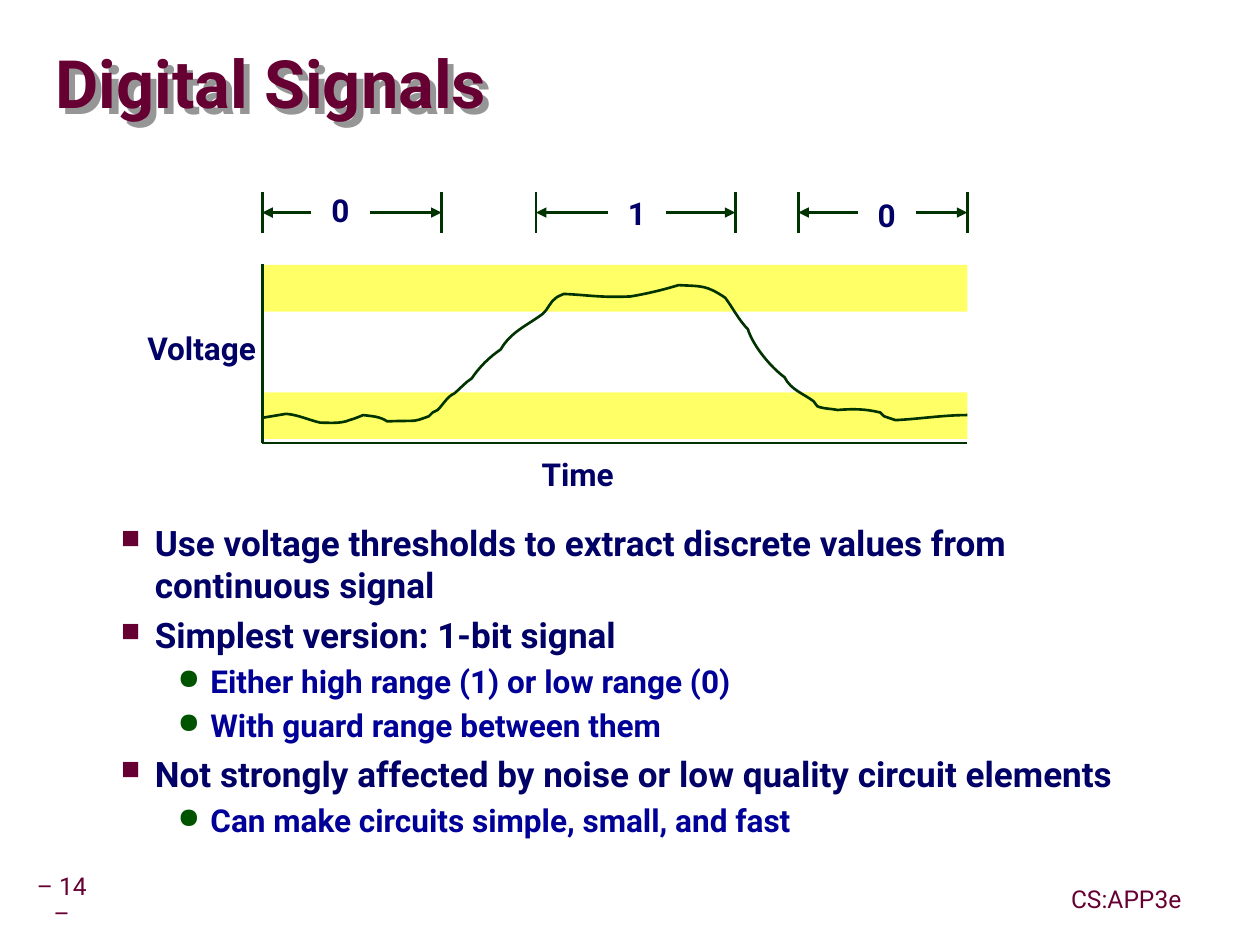
from lxml import etree
from pptx import Presentation
from pptx.dml.color import RGBColor
from pptx.enum.shapes import MSO_CONNECTOR, MSO_SHAPE
from pptx.enum.text import MSO_ANCHOR, PP_ALIGN
from pptx.oxml.ns import qn
from pptx.util import Inches, Pt

STRAIGHT = MSO_CONNECTOR.STRAIGHT
RECT = MSO_SHAPE.RECTANGLE
TOP, MIDDLE = MSO_ANCHOR.TOP, MSO_ANCHOR.MIDDLE
LEFT, CENTER, RIGHT = PP_ALIGN.LEFT, PP_ALIGN.CENTER, PP_ALIGN.RIGHT

FONT, BULLET_FONT = "Roboto", "OpenSymbol"
MAROON, NAVY, BLUE = "660033", "000066", "000099"
GREEN, BULLET_GREEN = "003300", "005400"
YELLOW, WHITE, GRAY = "FFFF66", "FFFFFF", "969696"

# Level: size, colour, left margin, indent, line spacing, space before,
# bullet, bullet colour, bullet size in percent
LEVELS = {
    1: (20, NAVY, 0.81, -0.27, 1.0, 5, "■", MAROON, 75),
    2: (18, BLUE, 1.25, -0.26, 1.07, 2, "●", BULLET_GREEN, 90),
}
BULLETS = [
    (1, "Use voltage thresholds to extract discrete values from continuous signal"),
    (1, "Simplest version: 1-bit signal"),
    (2, "Either high range (1) or low range (0)"),
    (2, "With guard range between them"),
    (1, "Not strongly affected by noise or low quality circuit elements"),
    (2, "Can make circuits simple, small, and fast"),
]
# Start, end, label left and label top, from the top left of the span row
SPANS = [("0", 0, 1.42, 0.4, -0.02), ("1", 2.17, 3.75, 2.75, 0),
         ("0", 4.25, 5.59, 4.73, 0.02)]
# Signal from the top left of the plot: start, then Bézier control points and ends
SIGNAL_START = (0.01, 1.22)
SIGNAL = [
    (0.07, 1.21, 0.13, 1.20, 0.19, 1.19), (0.29, 1.20, 0.37, 1.24, 0.46, 1.26),
    (0.53, 1.26, 0.62, 1.27, 0.69, 1.24), (0.73, 1.23, 0.80, 1.20, 0.80, 1.20),
    (0.87, 1.21, 0.93, 1.21, 0.99, 1.25), (1.24, 1.24, 1.18, 1.26, 1.32, 1.21),
    (1.33, 1.20, 1.33, 1.19, 1.35, 1.18), (1.36, 1.17, 1.38, 1.17, 1.39, 1.16),
    (1.43, 1.12, 1.47, 1.05, 1.52, 1.03), (1.57, 0.99, 1.61, 0.94, 1.66, 0.91),
    (1.72, 0.82, 1.80, 0.74, 1.89, 0.68), (1.97, 0.54, 2.10, 0.49, 2.22, 0.40),
    (2.27, 0.36, 2.28, 0.30, 2.33, 0.27), (2.34, 0.26, 2.37, 0.25, 2.39, 0.24),
    (2.60, 0.25, 2.68, 0.27, 2.92, 0.26), (3.04, 0.24, 3.17, 0.21, 3.30, 0.17),
    (3.49, 0.18, 3.52, 0.17, 3.67, 0.27), (3.73, 0.35, 3.78, 0.45, 3.85, 0.52),
    (3.89, 0.65, 4.03, 0.82, 4.14, 0.90), (4.19, 1.00, 4.29, 1.03, 4.37, 1.09),
    (4.38, 1.10, 4.39, 1.12, 4.40, 1.13), (4.44, 1.15, 4.52, 1.15, 4.56, 1.16),
    (4.68, 1.15, 4.78, 1.15, 4.90, 1.18), (4.91, 1.19, 4.92, 1.20, 4.93, 1.21),
    (4.96, 1.22, 5.02, 1.24, 5.02, 1.24), (5.22, 1.23, 5.40, 1.20, 5.59, 1.20),
]


def rgb(color):
    return RGBColor.from_string(color)


def inches(*values):
    return [Inches(v) for v in values]


def set_text(s, text, size, color, bold=True, align=CENTER, anchor=TOP,
             inset=0.05, spacing=0.9, wrap=True):
    tf = s.text_frame
    tf.text = text
    tf.word_wrap = wrap
    tf.vertical_anchor = anchor
    tf.margin_left = tf.margin_right = Inches(inset)
    tf.margin_top = tf.margin_bottom = Inches(inset)
    p = tf.paragraphs[0]
    p.alignment = align
    p.line_spacing = spacing
    format_run(p.runs[0], size, color, bold)


def format_run(r, size, color, bold=True):
    r.font.name = FONT
    r.font.size = Pt(size)
    r.font.bold = bold
    r.font.color.rgb = rgb(color)


def add_text(slide, box, *args, **kwargs):
    s = slide.shapes.add_textbox(*inches(*box))
    set_text(s, *args, **kwargs)
    return s


def set_line(s, color):
    s.line.color.rgb = rgb(color)
    s.line.width = Pt(1.5)


def add_rect(slide, box, fill):
    s = slide.shapes.add_shape(RECT, *inches(*box))
    s.shadow.inherit = False
    s.fill.solid()
    s.fill.fore_color.rgb = rgb(fill)
    s.line.fill.background()
    return s


def add_line(slide, x1, y1, x2, y2, arrows=False):
    s = slide.shapes.add_connector(STRAIGHT, *inches(x1, y1, x2, y2))
    set_line(s, GREEN)
    if arrows:
        ln = s.line._get_or_add_ln()
        for end in ("a:headEnd", "a:tailEnd"):
            etree.SubElement(ln, qn(end), type="triangle")
    etree.SubElement(s._element.spPr, qn("a:effectLst"))


def add_title(slide, box):
    s = add_text(slide, box, "Digital Signals", 38, MAROON, align=LEFT,
                 anchor=MIDDLE, inset=0, spacing=0.87)
    effects = etree.SubElement(s._element.spPr, qn("a:effectLst"))
    shadow = etree.SubElement(effects, qn("a:outerShdw"), dir="2700000",
                              dist=str(Inches(0.07)), algn="ctr", rotWithShape="0")
    etree.SubElement(shadow, qn("a:srgbClr"), val=GRAY)


def add_spans(slide, box):
    """Draw the row of dimension arrows that names each bit."""
    x, y, _, h = box
    for bit, start, end, label_x, label_y in SPANS:
        for tick in (start, end):
            add_line(slide, x + tick, y, x + tick, y + h)
        add_line(slide, x + start, y + h / 2, x + end, y + h / 2, arrows=True)
        s = add_rect(slide, (x + label_x, y + label_y, 0.44, 0.39), WHITE)
        set_line(s, WHITE)
        set_text(s, bit, 18, NAVY)


def add_signal(slide, x, y):
    """Join the knots, then turn each straight piece into a Bézier curve."""
    def place(px, py):
        return Inches(x + px), Inches(y + py)

    builder = slide.shapes.build_freeform(*place(*SIGNAL_START))
    builder.add_line_segments([place(*seg[4:]) for seg in SIGNAL], close=False)
    s = builder.convert_to_shape()
    s.shadow.inherit = False
    s.fill.background()
    set_line(s, GREEN)
    pieces = list(s._element.iter(qn("a:lnTo")))
    for piece, seg in zip(pieces, SIGNAL):
        piece.tag = qn("a:cubicBezTo")
        for i, control in enumerate((seg[:2], seg[2:4])):
            cx, cy = place(*control)
            pt = etree.Element(qn("a:pt"), x=str(cx - s.left), y=str(cy - s.top))
            piece.insert(i, pt)


def add_plot(slide, box):
    x, y, w, h = box
    for band_y in (0.01, 1.02):
        add_rect(slide, (x, y + band_y, w, 0.37), YELLOW)
    add_line(slide, x, y + h, x, y)
    add_line(slide, x, y + h, x + w, y + h)
    add_text(slide, (x - 1, y + 0.5, 1, 0.37), "Voltage", 18, NAVY,
             align=RIGHT, wrap=False)
    add_text(slide, (x + 2.16, y + h + 0.08, 0.68, 0.37), "Time", 18, NAVY,
             wrap=False)
    add_signal(slide, x, y)


def add_bullets(slide, box):
    tf = slide.shapes.add_textbox(*inches(*box)).text_frame
    tf.word_wrap = True
    for i, (level, text) in enumerate(BULLETS):
        size, color, margin, indent, spacing, before, char, char_color, pct = LEVELS[level]
        p = tf.add_paragraph() if i else tf.paragraphs[0]
        p.text = text
        p.level = level
        p.line_spacing = spacing
        p.space_before = Pt(before)
        format_run(p.runs[0], size, color)
        pPr = p._p.get_or_add_pPr()
        pPr.set("marL", str(Inches(margin)))
        pPr.set("indent", str(Inches(indent)))
        clr = etree.SubElement(pPr, qn("a:buClr"))
        etree.SubElement(clr, qn("a:srgbClr"), val=char_color)
        etree.SubElement(pPr, qn("a:buSzPct"), val=str(pct * 1000))
        etree.SubElement(pPr, qn("a:buFont"), typeface=BULLET_FONT)
        etree.SubElement(pPr, qn("a:buChar"), char=char)


def add_footer(slide, box):
    x, y, w, h = box
    for text, left, width in (("– 14 –", x, 0.5), ("CS:APP3e", x + w - 1.04, 1.04)):
        add_text(slide, (left, y, width, h), text, 14, MAROON, bold=False,
                 anchor=MIDDLE)


def main():
    prs = Presentation()
    prs.slide_width, prs.slide_height = inches(9.99, 7.49)
    slide = prs.slides.add_slide(prs.slide_layouts[6])
    add_footer(slide, (0.24, 6.9, 9.21, 0.48))
    add_title(slide, (0.44, 0.27, 9.52, 0.85))
    add_bullets(slide, (0.32, 4.08, 9.07, 2.95))
    add_plot(slide, (2.08, 2.09, 5.59, 1.42))
    add_spans(slide, (2.08, 1.52, 5.59, 0.33))
    prs.save("out.pptx")


if __name__ == "__main__":
    main()
